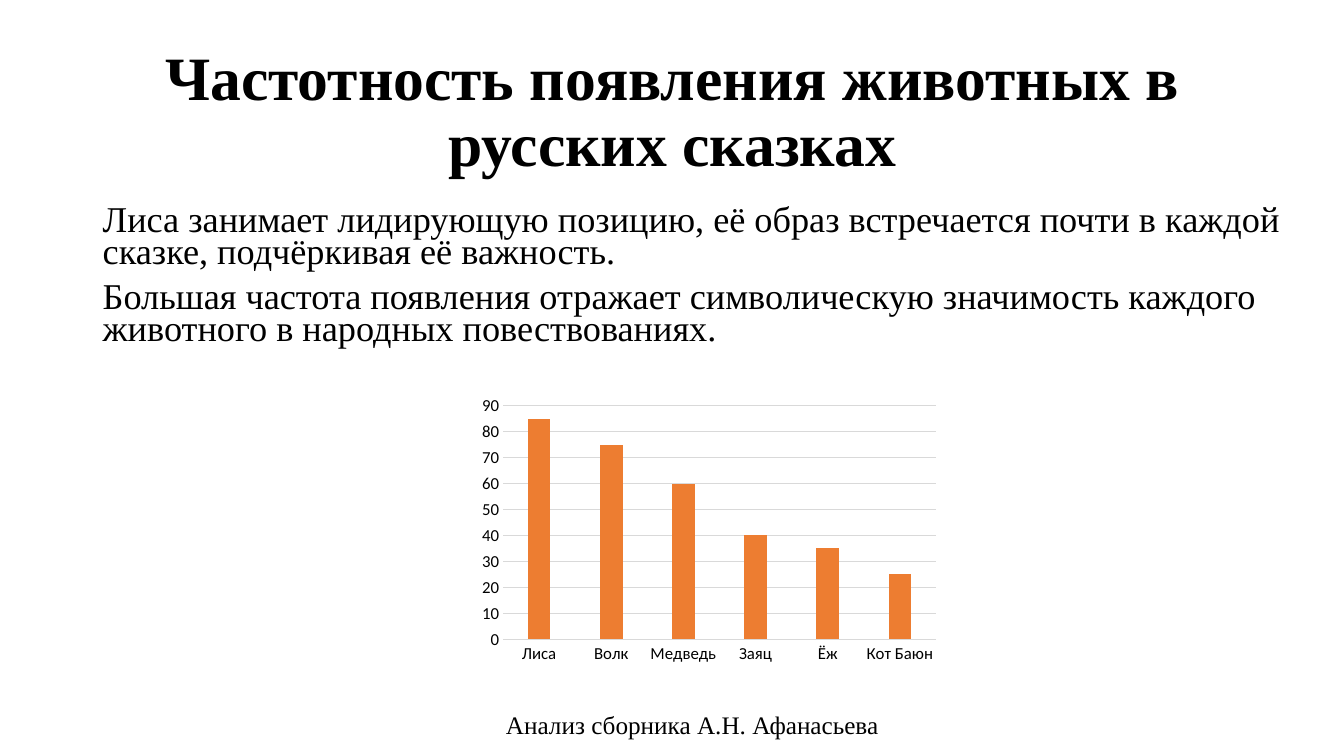
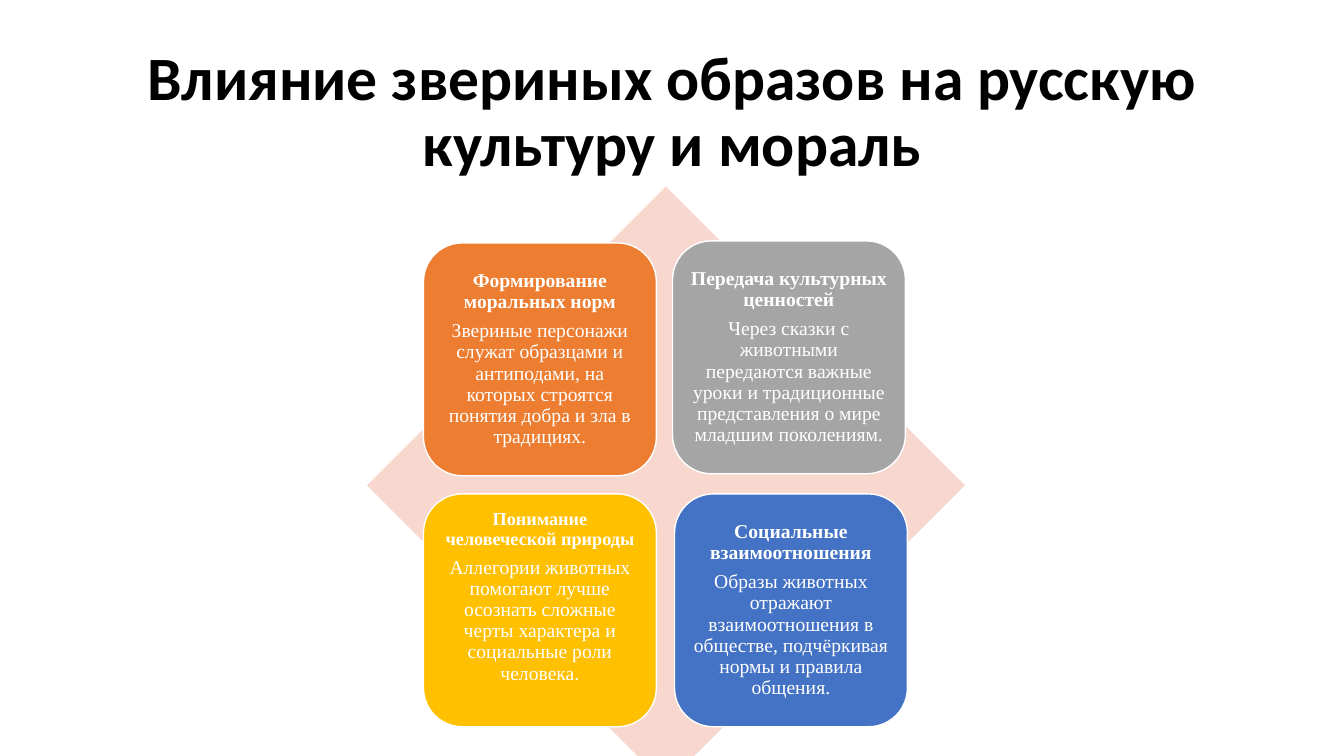
from lxml import etree
from pptx import Presentation
from pptx import util as u
from pptx.chart.data import CategoryChartData
from pptx.dml.color import RGBColor
from pptx.enum import chart as charts, shapes, text
from pptx.oxml import parse_xml

# Content
FREQUENCY_TITLE = "Частотность появления животных в русских сказках"
FREQUENCY_NOTES = [
    "Лиса занимает лидирующую позицию, её образ встречается почти в каждой сказке, "
    "подчёркивая её важность.",
    "Большая частота появления отражает символическую значимость каждого животного "
    "в народных повествованиях.",
]
FREQUENCIES = {"Лиса": 85, "Волк": 75, "Медведь": 60, "Заяц": 40, "Ёж": 35, "Кот Баюн": 25}
CAPTION = "Анализ сборника А.Н. Афанасьева"

INFLUENCE_TITLE = "Влияние звериных образов на русскую культуру и мораль"
# left, top, fill, heading size, bottom inset, heading, body
TILES = [
    (420, 241, "ED7D31", 14, 6, "Формирование моральных норм",
     "Звериные персонажи служат образцами и антиподами, на которых строятся "
     "понятия добра и зла в традициях."),
    (667, 239, "A5A5A5", 14, 6, "Передача культурных ценностей",
     "Через сказки с животными передаются важные уроки и традиционные "
     "представления о мире младшим поколениям."),
    (420, 490, "FFC000", 13, 32, "Понимание человеческой природы",
     "Аллегории животных помогают лучше осознать сложные черты характера и "
     "социальные роли человека."),
    (669, 490, "4472C4", 14, 6, "Социальные взаимоотношения",
     "Образы животных отражают взаимоотношения в обществе, подчёркивая нормы "
     "и правила общения."),
]

# Shared style
SERIF, SANS = "Times New Roman", "Calibri"
BLACK, WHITE, ORANGE, GRID, DIAMOND = "000000", "FFFFFF", "ED7D31", "D9D9D9", "F8D7CE"
TILE_SIZE = 231
CENTER = text.PP_ALIGN.CENTER


def px(value):
    return u.Emu(value * 9144)  # 100 px to the inch


def area(*lengths):
    return [px(length) for length in lengths]


def color(value):
    return RGBColor.from_string(value)


def style_font(font, size, name, ink=BLACK, bold=False):
    font.size, font.name, font.bold = u.Pt(size), name, bold
    font.color.rgb = color(ink)


def write(frame, content, first=True, align=None, spacing=None, before=None, after=None,
          **font):
    para = frame.paragraphs[0] if first else frame.add_paragraph()
    para.alignment, para.line_spacing = align, spacing
    para.space_before = None if before is None else u.Pt(before)
    para.space_after = None if after is None else u.Pt(after)
    span = para.add_run()
    span.text = content
    style_font(span.font, **font)


def add_slide(deck, title, name):
    page = deck.slides.add_slide(deck.slide_layouts[5])
    box = page.shapes.title
    box.left, box.top, box.width, box.height = area(92, 40, 1150, 145)
    frame = box.text_frame
    frame.auto_size = text.MSO_AUTO_SIZE.NONE
    frame.vertical_anchor = text.MSO_ANCHOR.MIDDLE
    write(frame, title, align=CENTER, spacing=0.9, size=44, name=name, bold=True)
    return page


def add_shape(page, kind, place, fill, line=None):
    shape = page.shapes.add_shape(kind, *area(*place))
    shape.shadow.inherit = False
    shape.fill.solid()
    shape.fill.fore_color.rgb = color(fill)
    if line:
        shape.line.color.rgb = color(line)
        shape.line.width = u.Pt(1)
    else:
        shape.line.fill.background()
    return shape


def style_line(line):
    line.color.rgb = color(GRID)
    line.width = u.Pt(0.75)


def set_plot_area(chart, **position):
    namespace = "http://schemas.openxmlformats.org/drawingml/2006/chart"
    plot_area = chart.plots[0]._element.getparent()
    for old in plot_area.findall(f"{{{namespace}}}layout"):
        plot_area.remove(old)
    layout = parse_xml(f'<c:layout xmlns:c="{namespace}"><c:manualLayout/></c:layout>')
    values = {"layoutTarget": "inner", "xMode": "edge", "yMode": "edge", **position}
    for tag, value in values.items():
        etree.SubElement(layout[0], f"{{{namespace}}}{tag}").set("val", str(value))
    plot_area.insert(0, layout)


def add_frequency_chart(page):
    data = CategoryChartData()
    data.categories = list(FREQUENCIES)
    data.add_series("Series 1", list(FREQUENCIES.values()))
    chart = page.shapes.add_chart(charts.XL_CHART_TYPE.COLUMN_CLUSTERED,
                                  *area(455, 385, 488, 290), data).chart
    chart.has_legend = chart.has_title = False
    style_font(chart.font, 10, SANS)
    plot = chart.plots[0]
    plot.gap_width, plot.overlap, plot.vary_by_categories = 219, -27, False
    bars = plot.series[0].format.fill
    bars.solid()
    bars.fore_color.rgb = color(ORANGE)
    for axis in (chart.category_axis, chart.value_axis):
        axis.major_tick_mark = axis.minor_tick_mark = charts.XL_TICK_MARK.NONE
        style_font(axis.tick_labels.font, 12, SANS)
    style_line(chart.category_axis.format.line)
    scale = chart.value_axis
    scale.minimum_scale, scale.maximum_scale, scale.major_unit = 0, 90, 10
    scale.format.line.fill.background()
    style_line(scale.major_gridlines.format.line)
    set_plot_area(chart, x=0.09, y=0.06, w=0.88, h=0.8)


def build_frequency(deck):
    page = add_slide(deck, FREQUENCY_TITLE, SERIF)

    # Notes
    frame = page.shapes.add_textbox(*area(92, 200, 1251, 159)).text_frame
    frame.word_wrap = True
    for index, note in enumerate(FREQUENCY_NOTES):
        write(frame, note, first=index == 0, spacing=0.74, before=9 if index else None,
              size=25.9, name=SERIF)

    # Chart and its caption
    add_frequency_chart(page)
    frame = page.shapes.add_textbox(*area(492, 699, 394, 40)).text_frame
    frame.word_wrap = False
    write(frame, CAPTION, size=18, name=SERIF)


def build_influence(deck):
    page = add_slide(deck, INFLUENCE_TITLE, SANS)
    add_shape(page, shapes.MSO_SHAPE.DIAMOND, (364, 185, 593, 593), DIAMOND)

    # Tiles
    for left, top, fill, size, bottom, heading, body in TILES:
        tile = add_shape(page, shapes.MSO_SHAPE.ROUNDED_RECTANGLE,
                         (left, top, TILE_SIZE, TILE_SIZE), fill, WHITE)
        frame = tile.text_frame
        frame.word_wrap = True
        frame.vertical_anchor = text.MSO_ANCHOR.MIDDLE
        frame.margin_left = frame.margin_right = frame.margin_top = px(6)
        frame.margin_bottom = px(bottom)
        shared = dict(align=CENTER, spacing=0.9, name=SERIF, ink=WHITE)
        write(frame, heading, after=5.5, size=size, bold=True, **shared)
        write(frame, body, first=False, size=14, **shared)


def main():
    deck = Presentation()
    deck.slide_width, deck.slide_height = u.Inches(13.33), u.Inches(7.5)
    build_frequency(deck)
    build_influence(deck)
    deck.save("out.pptx")


if __name__ == "__main__":
    main()
